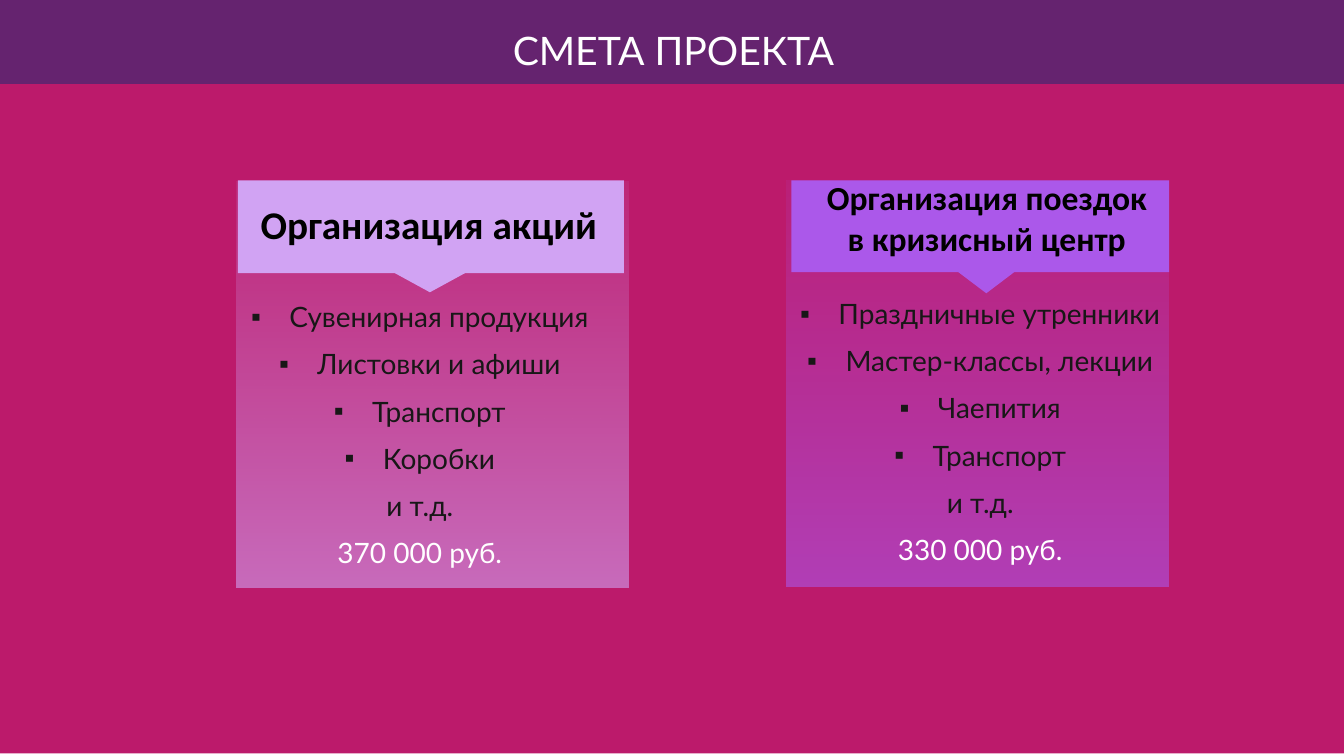
from dataclasses import dataclass

from lxml.etree import SubElement
from pptx import Presentation
from pptx.dml.color import RGBColor
from pptx.enum.shapes import MSO_SHAPE as Preset
from pptx.enum.text import MSO_ANCHOR as Anchor, MSO_AUTO_SIZE as AutoSize, PP_ALIGN as Align
from pptx.oxml.ns import qn
from pptx.util import Pt

COLORS = {
    "header": "65236F",
    "background": "BC1A6B",
    "lilac": "D1A3F3",
    "violet": "AB58EA",
    "heading": "000000",
    "item": "181717",
    "white": "FFFFFF",
}
BULLET_INDENT = Pt(27.36)


@dataclass
class Box:
    left: float
    top: float
    width: float
    height: float


@dataclass
class Card:
    color: str
    panel: Box
    arrow: Box
    banner: Box
    heading_box: Box
    heading: str
    heading_size: float
    list_box: Box
    items: list[str]
    total: str


CARDS = [
    Card("lilac", Box(169.2, 129.6, 279.4, 290.2), Box(233.3, 168.5, 147.6, 40.3),
         Box(169.9, 128.9, 275.8, 66.2), Box(170.6, 139.7, 271.4, 41),
         "Организация акций", 28, Box(149.8, 208.8, 300.2, 242.6),
         ["Сувенирная продукция", "Листовки и афиши", "Транспорт", "Коробки"],
         "370 000 руб."),
    Card("violet", Box(561.6, 128.9, 272.9, 290.2), Box(637.9, 159.1, 133.2, 50.4),
         Box(565.2, 128.9, 270, 65.5), Box(575.3, 123.1, 259.2, 65.5),
         "Организация поездок в кризисный центр", 24, Box(550.1, 206.6, 300.2, 242.6),
         ["Праздничные утренники", "Мастер-классы, лекции", "Чаепития", "Транспорт"],
         "330 000 руб."),
]


def rgb(name: str) -> RGBColor:
    return RGBColor.from_string(COLORS[name])


def place(shape, box: Box) -> None:
    shape.left, shape.top = Pt(box.left), Pt(box.top)
    shape.width, shape.height = Pt(box.width), Pt(box.height)


def add_block(shapes, preset: Preset, box: Box, color: str):
    shape = shapes.add_shape(preset, Pt(box.left), Pt(box.top), Pt(box.width), Pt(box.height))
    shape.shadow.inherit = False
    shape.line.fill.background()
    shape.fill.solid()
    shape.fill.fore_color.rgb = rgb(color)
    return shape


def fade(shape, color: str) -> None:
    shape.fill.gradient()
    shape.fill.gradient_angle = 270
    for stop in shape.fill.gradient_stops:
        stop.color.rgb = rgb(color)
    stops = shape.element.spPr.iter(qn("a:srgbClr"))
    for stop_color, opacity in zip(stops, (10, 60)):
        SubElement(stop_color, qn("a:alpha"), val=str(opacity * 1000))


def prepare_frame(shape):
    frame = shape.text_frame
    frame.word_wrap = True
    frame.auto_size = AutoSize.NONE
    frame.vertical_anchor = Anchor.TOP
    return frame


def format_paragraph(paragraph, font_name: str, size: float, color: str,
                     spacing: float = 1.07, bold: bool = False) -> None:
    paragraph.alignment = Align.CENTER
    paragraph.line_spacing = spacing
    paragraph.space_before = Pt(0)
    paragraph.space_after = Pt(8)
    font = paragraph.font
    font.name, font.size, font.bold = font_name, Pt(size), bold
    font.color.rgb = rgb(color)


def set_bullet(paragraph, bulleted: bool) -> None:
    properties = paragraph._p.get_or_add_pPr()
    indent = BULLET_INDENT if bulleted else 0
    properties.set("marL", str(indent))
    properties.set("indent", str(-indent))
    if bulleted:
        SubElement(properties, qn("a:buChar"), char="▪")
    else:
        SubElement(properties, qn("a:buNone"))


def bring_to_front(shape) -> None:
    shape.element.getparent().append(shape.element)


def add_card(slide, card: Card, placeholder) -> None:
    group = slide.shapes.add_group_shape()
    fade(add_block(group.shapes, Preset.RECTANGLE, card.panel, card.color), card.color)
    arrow = add_block(group.shapes, Preset.DOWN_ARROW, card.arrow, card.color)
    arrow.adjustments[0] = arrow.adjustments[1] = 1
    add_block(group.shapes, Preset.RECTANGLE, card.banner, card.color)

    heading = slide.shapes.add_textbox(0, 0, 0, 0)
    place(heading, card.heading_box)
    paragraph = prepare_frame(heading).paragraphs[0]
    paragraph.text = card.heading
    format_paragraph(paragraph, "Calibri", card.heading_size, "heading", 1, True)

    place(placeholder, card.list_box)
    frame = prepare_frame(placeholder)
    frame.text = "\n".join([*card.items, "и т.д.", card.total])
    for index, paragraph in enumerate(frame.paragraphs):
        set_bullet(paragraph, index < len(card.items))
        color = "white" if paragraph.text == card.total else "item"
        format_paragraph(paragraph, "Lato", 20, color)
    bring_to_front(placeholder)


def main() -> None:
    presentation = Presentation()
    presentation.slide_width, presentation.slide_height = Pt(960), Pt(540)
    slide = presentation.slides.add_slide(presentation.slide_layouts[3])
    title, *lists = slide.placeholders

    add_block(slide.shapes, Preset.RECTANGLE, Box(0, 0, 960, 69.1), "header")
    add_block(slide.shapes, Preset.RECTANGLE, Box(0, 60.1, 960, 478.1), "background")

    place(title, Box(355, 13, 252, 44))
    frame = prepare_frame(title)
    frame.text = "СМЕТА ПРОЕКТА"
    format_paragraph(frame.paragraphs[0], "Lato", 28, "white")
    bring_to_front(title)

    for card, placeholder in zip(CARDS, lists):
        add_card(slide, card, placeholder)

    presentation.save("out.pptx")


if __name__ == "__main__":
    main()
